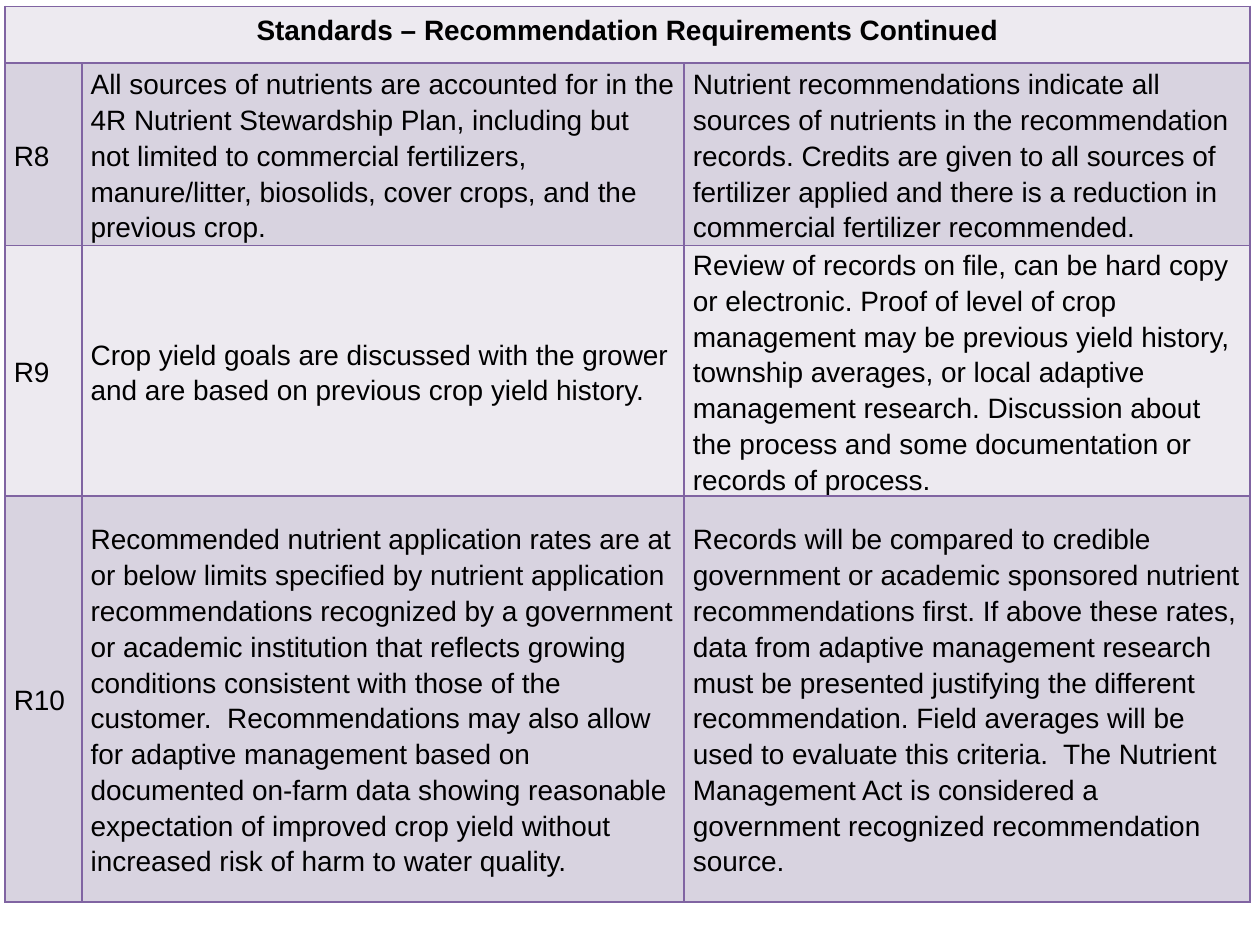
from lxml.etree import SubElement
from pptx import Presentation
from pptx.dml.color import RGBColor
from pptx.enum.text import MSO_ANCHOR, PP_ALIGN
from pptx.oxml.ns import qn
from pptx.util import Inches, Pt

# Content
TITLE = "Standards – Recommendation Requirements Continued"
STANDARDS = [
    ("R8",
     "All sources of nutrients are accounted for in the 4R Nutrient Stewardship Plan, "
     "including but not limited to commercial fertilizers, manure/litter, biosolids, "
     "cover crops, and the previous crop.",
     "Nutrient recommendations indicate all sources of nutrients in the recommendation "
     "records. Credits are given to all sources of fertilizer applied and there is a "
     "reduction in commercial fertilizer recommended."),
    ("R9",
     "Crop yield goals are discussed with the grower and are based on previous crop "
     "yield history.",
     "Review of records on file, can be hard copy or electronic. Proof of level of crop "
     "management may be previous yield history, township averages, or local adaptive "
     "management research. Discussion about the process and some documentation or "
     "records of process."),
    ("R10",
     "Recommended nutrient application rates are at or below limits specified by "
     "nutrient application recommendations recognized by a government or academic "
     "institution that reflects growing conditions consistent with those of the "
     "customer.  Recommendations may also allow for adaptive management based on "
     "documented on-farm data showing reasonable expectation of improved crop yield "
     "without increased risk of harm to water quality.",
     "Records will be compared to credible government or academic sponsored nutrient "
     "recommendations first. If above these rates, data from adaptive management "
     "research must be presented justifying the different recommendation. Field "
     "averages will be used to evaluate this criteria.  The Nutrient Management Act is "
     "considered a government recognized recommendation source."),
]

# Theme and layout
THEME = {"font": "Arial", "size": 16, "text": "000000", "border": "8064A2",
         "border_pt": 1, "bands": ("EDEAF0", "D8D3E0")}
LEFT, TOP = 0.04, 0.05
COLS = (0.61, 4.78, 4.49)
ROWS = (0.45, 1.45, 1.97, 3.22)
HEADER = {
    "cell": {"margin_left": Inches(0.15), "margin_right": Inches(0.15),
             "margin_top": Inches(0.07), "margin_bottom": Inches(0.07),
             "vertical_anchor": MSO_ANCHOR.TOP},
    "paragraph": {"alignment": PP_ALIGN.CENTER},
    "font": {"bold": True},
}
BODY = {
    "cell": {"margin_left": Inches(0.07), "margin_right": Inches(0.07),
             "margin_top": 0, "margin_bottom": 0,
             "vertical_anchor": MSO_ANCHOR.MIDDLE},
    "paragraph": {"alignment": PP_ALIGN.LEFT, "line_spacing": 1.15},
    "font": {"bold": False},
}


def set_attrs(obj, values):
    for name, value in values.items():
        setattr(obj, name, value)


def add_borders(cell):
    tcPr = cell._tc.get_or_add_tcPr()
    for side in ("lnL", "lnR", "lnT", "lnB"):
        ln = SubElement(tcPr, qn(f"a:{side}"), w=str(Pt(THEME["border_pt"])))
        fill = SubElement(ln, qn("a:solidFill"))
        SubElement(fill, qn("a:srgbClr"), val=THEME["border"])


def style_cell(cell, row):
    add_borders(cell)  # borders come before the fill in the cell properties
    cell.fill.solid()
    cell.fill.fore_color.rgb = RGBColor.from_string(THEME["bands"][row % 2])


def write_cell(cell, text, style):
    set_attrs(cell, style["cell"])
    p = cell.text_frame.paragraphs[0]
    set_attrs(p, style["paragraph"])
    r = p.add_run()
    r.text = text
    set_attrs(r.font, {"name": THEME["font"], "size": Pt(THEME["size"]), **style["font"]})
    r.font.color.rgb = RGBColor.from_string(THEME["text"])


def main():
    prs = Presentation()
    prs.slide_width, prs.slide_height = Inches(10), Inches(7.5)
    s = prs.slides.add_slide(prs.slide_layouts[6])

    # Table grid
    table = s.shapes.add_table(len(ROWS), len(COLS), Inches(LEFT), Inches(TOP),
                               Inches(sum(COLS)), Inches(sum(ROWS))).table
    for col, width in zip(table.columns, COLS):
        col.width = Inches(width)
    for i, (row, height) in enumerate(zip(table.rows, ROWS)):
        row.height = Inches(height)
        for cell in row.cells:
            style_cell(cell, i)

    # Heading across all columns
    heading = table.cell(0, 0)
    heading.merge(table.cell(0, len(COLS) - 1))
    write_cell(heading, TITLE, HEADER)

    # Standards
    for i, standard in enumerate(STANDARDS, 1):
        for j, text in enumerate(standard):
            write_cell(table.cell(i, j), text, BODY)

    prs.save("out.pptx")


if __name__ == "__main__":
    main()
